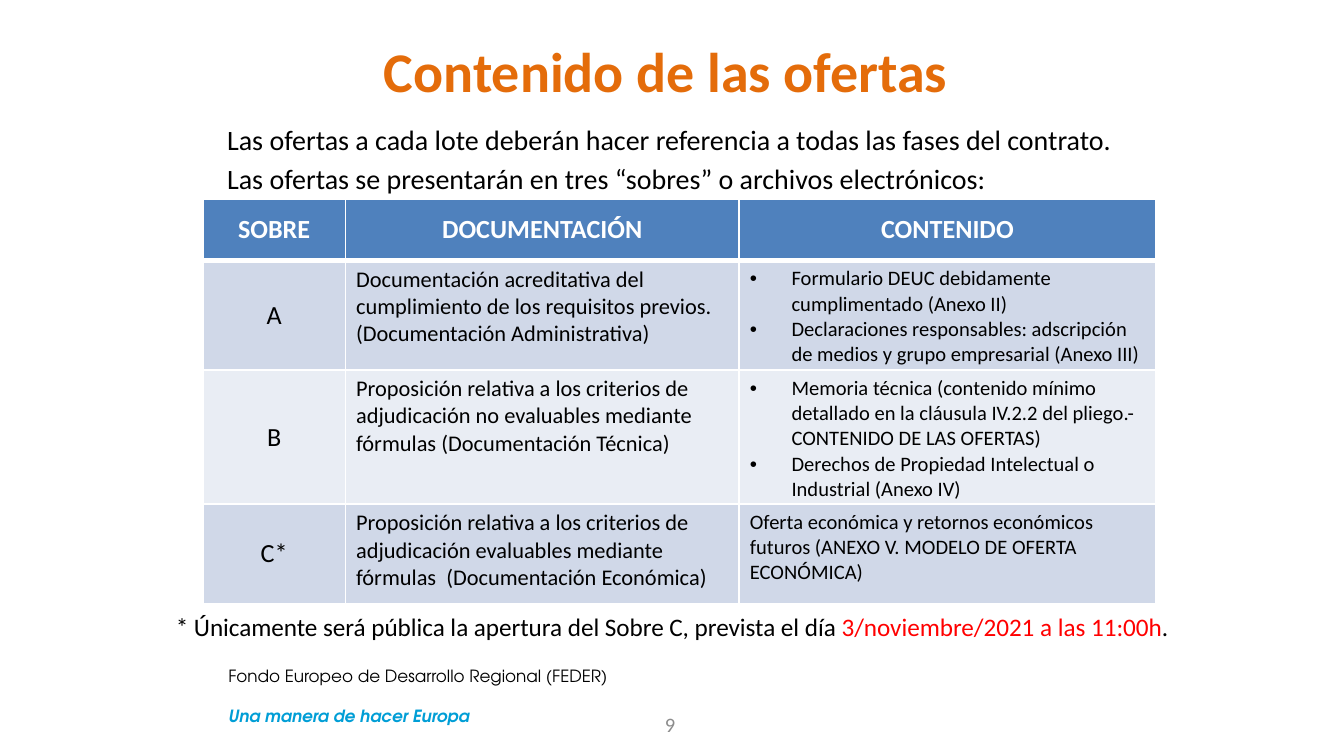
"""Builds the slide on the contents of the tender offers."""
from lxml import etree
from pptx import Presentation, util as u
from pptx.dml.color import RGBColor
from pptx.enum import text as t
from pptx.oxml.ns import qn

WIDTH = 10
HEIGHT = WIDTH * 9 / 16
BLACK, WHITE, RED = "000000", "FFFFFF", "FF0000"
HEADER_FILL, BANDS = "4F81BD", ("D0D8E8", "E9EDF4")
LEFT, CENTER = t.PP_ALIGN.LEFT, t.PP_ALIGN.CENTER
TOP, MIDDLE = t.MSO_ANCHOR.TOP, t.MSO_ANCHOR.MIDDLE

TITLE = "Contenido de las ofertas"
INTRO = (
    "Las ofertas a cada lote deberán hacer referencia a todas las fases del contrato. "
    "Las ofertas se presentarán en tres “sobres” o archivos electrónicos:"
)
HEADERS = ["SOBRE", "DOCUMENTACIÓN", "CONTENIDO"]
ENVELOPES = [
    ("A",
     "Documentación acreditativa del cumplimiento de los requisitos previos. "
     "(Documentación Administrativa)",
     ["Formulario DEUC debidamente cumplimentado (Anexo II)",
      "Declaraciones responsables: adscripción de medios y grupo empresarial (Anexo III)"]),
    ("B",
     "Proposición relativa a los criterios de adjudicación no evaluables mediante "
     "fórmulas (Documentación Técnica)",
     ["Memoria técnica (contenido mínimo detallado en la cláusula IV.2.2 del pliego.- "
      "CONTENIDO DE LAS OFERTAS)",
      "Derechos de Propiedad Intelectual o Industrial (Anexo IV)"]),
    ("C*",
     "Proposición relativa a los criterios de adjudicación evaluables mediante "
     "fórmulas  (Documentación Económica)",
     ["Oferta económica y retornos económicos futuros "
      "(ANEXO V. MODELO DE OFERTA ECONÓMICA)"]),
]
NOTE = [
    ("* Únicamente será pública la apertura del Sobre C, prevista el día ", BLACK),
    ("3/noviembre/2021 a las 11:00h", RED),
    (".", BLACK),
]
FUND, SLOGAN = "Fondo Europeo de Desarrollo Regional (FEDER)", "Una manera de hacer Europa"
PAGE = "9"
COLUMNS = [1.06, 2.93, 3.1]
ROWS = [0.46, 0.8, 0.95, 0.74]


def write(frame, content, *, size, color=BLACK, font="Calibri", bold=False,
          italic=False, align=LEFT, bullet=False, before=0, pitch=None, add=False):
    """Write a paragraph made of a string or of (string, colour) runs."""
    paragraph = frame.add_paragraph() if add else frame.paragraphs[0]
    paragraph.alignment = align
    if bullet:
        props = paragraph._p.get_or_add_pPr()
        props.set("marL", str(u.Inches(0.31)))
        props.set("indent", str(-u.Inches(0.31)))
        etree.SubElement(props, qn("a:buFont")).set("typeface", "Arial")
        etree.SubElement(props, qn("a:buChar")).set("char", "•")
    if add:
        paragraph.space_before = u.Pt(before)
    if pitch:
        paragraph.line_spacing = u.Pt(pitch)
    for words, ink in [(content, color)] if isinstance(content, str) else content:
        run = paragraph.add_run()
        run.text = words
        run.font.size, run.font.name = u.Pt(size), font
        run.font.bold, run.font.italic = bold, italic
        run.font.color.rgb = RGBColor.from_string(ink)


def add_box(slide, left, top, width, height, anchor=TOP, inset=(0.1, 0.05)):
    """Add a wrapping text box and return its text frame."""
    frame = slide.shapes.add_textbox(*map(u.Inches, (left, top, width, height))).text_frame
    frame.word_wrap, frame.vertical_anchor = True, anchor
    frame.margin_left = frame.margin_right = u.Inches(inset[0])
    frame.margin_top = frame.margin_bottom = u.Inches(inset[1])
    return frame


def format_cell(cell, fill, anchor, bottom=1, top=1):
    """Set the fill, margins, anchor and white borders of a cell."""
    cell.margin_left = cell.margin_right = u.Inches(0.08)
    cell.margin_top = cell.margin_bottom = u.Inches(0.04)
    cell.vertical_anchor = anchor
    props = cell._tc.get_or_add_tcPr()
    for side, points in (("L", 1), ("R", 1), ("T", top), ("B", bottom)):
        line = etree.SubElement(props, qn("a:ln" + side), w=str(u.Pt(points)))
        etree.SubElement(etree.SubElement(line, qn("a:solidFill")),
                         qn("a:srgbClr"), val=WHITE)
    cell.fill.solid()
    cell.fill.fore_color.rgb = RGBColor.from_string(fill)


def add_envelopes(slide, left, top):
    """Add the table of the three envelopes."""
    table = slide.shapes.add_table(
        len(ROWS), len(COLUMNS), *map(u.Inches, (left, top, sum(COLUMNS), sum(ROWS)))).table
    table.horz_banding = False
    for column, width in zip(table.columns, COLUMNS):
        column.width = u.Inches(width)
    for row, height in zip(table.rows, ROWS):
        row.height = u.Inches(height)
    for col, header in enumerate(HEADERS):
        cell = table.cell(0, col)
        format_cell(cell, HEADER_FILL, MIDDLE, bottom=3)
        write(cell.text_frame, header, size=14, color=WHITE, bold=True, align=CENTER)
    for row, (letter, documents, contents) in enumerate(ENVELOPES, 1):
        cells = [table.cell(row, col) for col in range(len(COLUMNS))]
        for cell, anchor in zip(cells, (MIDDLE, TOP, TOP)):
            format_cell(cell, BANDS[(row - 1) % 2], anchor, top=3 if row == 1 else 1)
        write(cells[0].text_frame, letter, size=14, align=CENTER)
        write(cells[1].text_frame, documents, size=12)
        for index, item in enumerate(contents):
            write(cells[2].text_frame, item, size=11, bullet=len(contents) > 1, add=index > 0)


def main():
    """Build and save the presentation."""
    deck = Presentation()
    deck.slide_width, deck.slide_height = u.Inches(WIDTH), u.Inches(HEIGHT)
    slide = deck.slides.add_slide(deck.slide_layouts[6])

    footer = add_box(slide, 1.6, 4.98, 3.25, 0.4, MIDDLE)
    write(footer, FUND, size=9, font="TeX Gyre Adventor")
    write(footer, SLOGAN, size=9, font="TeX Gyre Adventor", color="009ED6",
          bold=True, italic=True, before=10.5, add=True)
    write(add_box(slide, 4.71, 5.24, 0.55, 0.3, MIDDLE), PAGE, size=11,
          color="8C8C8C", align=CENTER)

    intro = add_box(slide, 1.62, 0.86, 6.76, 3.63, inset=(0.07, 0.01))
    write(intro, INTRO, size=15, pitch=21)
    write(add_box(slide, 1.58, 0.23, 6.75, 0.58, MIDDLE), TITLE, size=30,
          color="E46C0A", bold=True, align=CENTER)
    write(add_box(slide, 1.21, 4.5, 8.24, 0.33), NOTE, size=13.5)
    add_envelopes(slide, 1.51, 1.48)
    deck.save("out.pptx")


if __name__ == "__main__":
    main()
